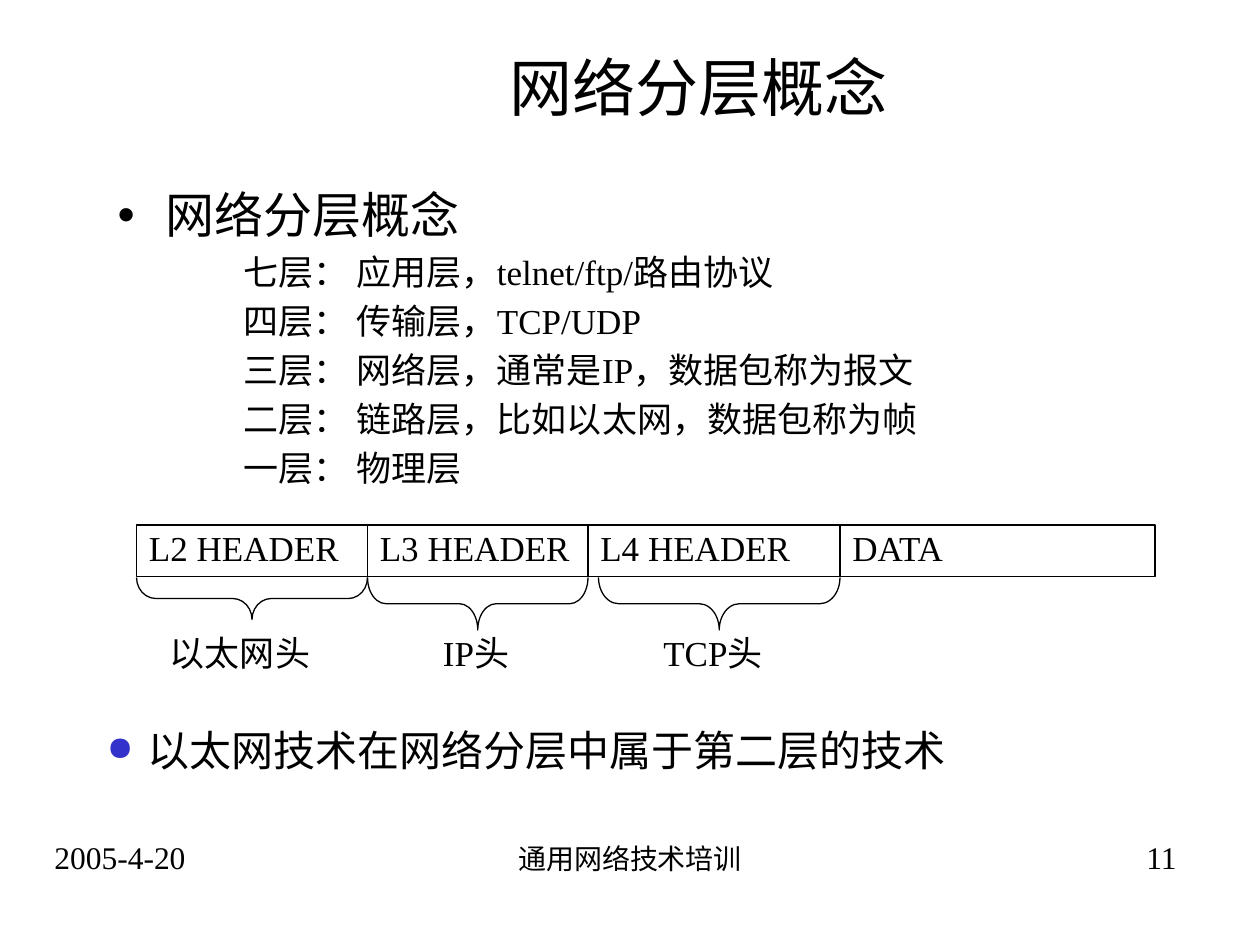
from dataclasses import dataclass

from lxml import etree
from pptx import Presentation
from pptx import util as u
from pptx.dml.color import RGBColor
from pptx.enum import shapes, text
from pptx.oxml import ns

COLUMNS, ROWS = 120, 90


@dataclass(frozen=True)
class Theme:
    font: str = "Times New Roman"
    ink: str = "000000"
    paper: str = "FFFFFF"
    accent: str = "3333CC"
    title: int = 36
    heading: int = 28
    summary: int = 24
    label: int = 20
    date: int = 18
    footer: int = 16
    line: float = 0.75


def apply(target, values):
    for name, value in values.items():
        setattr(target, name, value)


class SlideBuilder:
    def __init__(self, presentation, theme):
        self.theme = theme
        self.column = presentation.slide_width / COLUMNS
        self.row = presentation.slide_height / ROWS
        self.slide = presentation.slides.add_slide(presentation.slide_layouts[1])

    def area(self, left, top, width, height):
        return (round(left * self.column), round(top * self.row),
                round(width * self.column), round(height * self.row))

    def indent(self, paragraph, margin, hanging, bullet=None, color=None, percent=None):
        properties = paragraph._p.get_or_add_pPr()
        properties.set("marL", str(u.Inches(margin)))
        properties.set("indent", str(-u.Inches(hanging)))
        if color:
            holder = etree.SubElement(properties, ns.qn("a:buClr"))
            etree.SubElement(holder, ns.qn("a:srgbClr"), val=color)
        if percent:
            etree.SubElement(properties, ns.qn("a:buSzPct"), val=str(percent * 1000))
        if bullet:
            etree.SubElement(properties, ns.qn("a:buChar"), char=bullet)
        else:
            etree.SubElement(properties, ns.qn("a:buNone"))

    def format(self, paragraph, size, **values):
        settings = {"alignment": text.PP_ALIGN.LEFT, "space_before": u.Pt(0)}
        apply(paragraph, settings | values)
        apply(paragraph.font, {"name": self.theme.font, "size": u.Pt(size)})
        paragraph.font.color.rgb = RGBColor.from_string(self.theme.ink)

    def frame(self, shape, wrap=True):
        apply(shape.text_frame, {
            "word_wrap": wrap,
            "auto_size": text.MSO_AUTO_SIZE.NONE,
            "vertical_anchor": text.MSO_ANCHOR.TOP,
        })
        return shape.text_frame

    def placeholder(self, shape, area):
        names = ("left", "top", "width", "height")
        apply(shape, dict(zip(names, self.area(*area))))
        shape.fill.solid()
        shape.fill.fore_color.rgb = RGBColor.from_string(self.theme.paper)
        return self.frame(shape)

    def title(self, words, area):
        frame = self.placeholder(self.slide.shapes.title, area)
        frame.text = words
        self.format(frame.paragraphs[0], self.theme.title, alignment=text.PP_ALIGN.CENTER)

    def body(self, heading, items, area):
        frame = self.placeholder(self.slide.placeholders[1], area)
        frame.text = "\n".join([heading, *items])
        first, *rest = frame.paragraphs
        self.indent(first, 0.38, 0.38, "•")
        self.format(first, self.theme.heading)
        for paragraph in rest:
            self.indent(paragraph, 1.25, 0.25)
            self.format(paragraph, self.theme.label, level=2, space_before=u.Pt(4))

    def text(self, words, area, size, wrap=True, bullet=None, **values):
        box = self.slide.shapes.add_textbox(*self.area(*area))
        frame = self.frame(box, wrap)
        frame.text = words
        paragraph = frame.paragraphs[0]
        if bullet:
            self.indent(paragraph, 0.32, 0.32, bullet, self.theme.accent, 80)
        self.format(paragraph, size, **values)

    def outline(self, kind, area):
        shape = self.slide.shapes.add_shape(kind, *self.area(*area))
        shape.shadow.inherit = False
        shape.fill.background()
        shape.line.color.rgb = RGBColor.from_string(self.theme.ink)
        shape.line.width = u.Pt(self.theme.line)
        return shape

    def cell(self, words, area):
        shape = self.outline(shapes.MSO_SHAPE.RECTANGLE, area)
        frame = self.frame(shape)
        frame.text = words
        self.format(frame.paragraphs[0], self.theme.label, line_spacing=0.9)

    def brace(self, left, top, span, depth):
        area = (left + (span - depth) / 2, top + (depth - span) / 2, depth, span)
        shape = self.outline(shapes.MSO_SHAPE.RIGHT_BRACE, area)
        shape.rotation = 90
        shape.adjustments[0] = span / (12 * depth)


def main():
    presentation = Presentation()
    apply(presentation, {"slide_width": u.Inches(10), "slide_height": u.Inches(7.5)})
    theme = Theme()
    builder = SlideBuilder(presentation, theme)

    builder.title("网络分层概念", (35, 4, 63, 10))
    builder.body("网络分层概念", [
        "七层： 应用层，telnet/ftp/路由协议",
        "四层： 传输层，TCP/UDP",
        "三层： 网络层，通常是IP，数据包称为报文",
        "二层： 链路层，比如以太网，数据包称为帧",
        "一层： 物理层",
    ], (10, 17, 102, 38))

    left = 13
    for words, width in (("L2 HEADER", 22), ("L3 HEADER", 21),
                         ("L4 HEADER", 24), ("DATA", 30)):
        builder.cell(words, (left, 50, width, 4.9))
        left += width

    for brace, words, start, width in (
        ((13, 55, 22, 4), "以太网头", 15, 21),
        ((35, 55, 21, 5), "IP头", 41, 14),
        ((57, 55, 23, 5), "TCP头", 62, 14),
    ):
        builder.brace(*brace)
        builder.text(words, (start, 60, width, 4.8), theme.label, line_spacing=0.9)

    builder.text("以太网技术在网络分层中属于第二层的技术", (9, 69, 98, 5.5),
                 theme.summary, bullet="●", line_spacing=0.9)
    builder.text("2005-4-20", (4, 79.2, 15, 4.8), theme.date)
    builder.text("通用网络技术培训", (48.2, 79.6, 23.8, 4.4), theme.footer, wrap=False)
    builder.text("11", (108, 79.2, 5.9, 4.8), theme.date, wrap=False)
    presentation.save("out.pptx")


if __name__ == "__main__":
    main()
